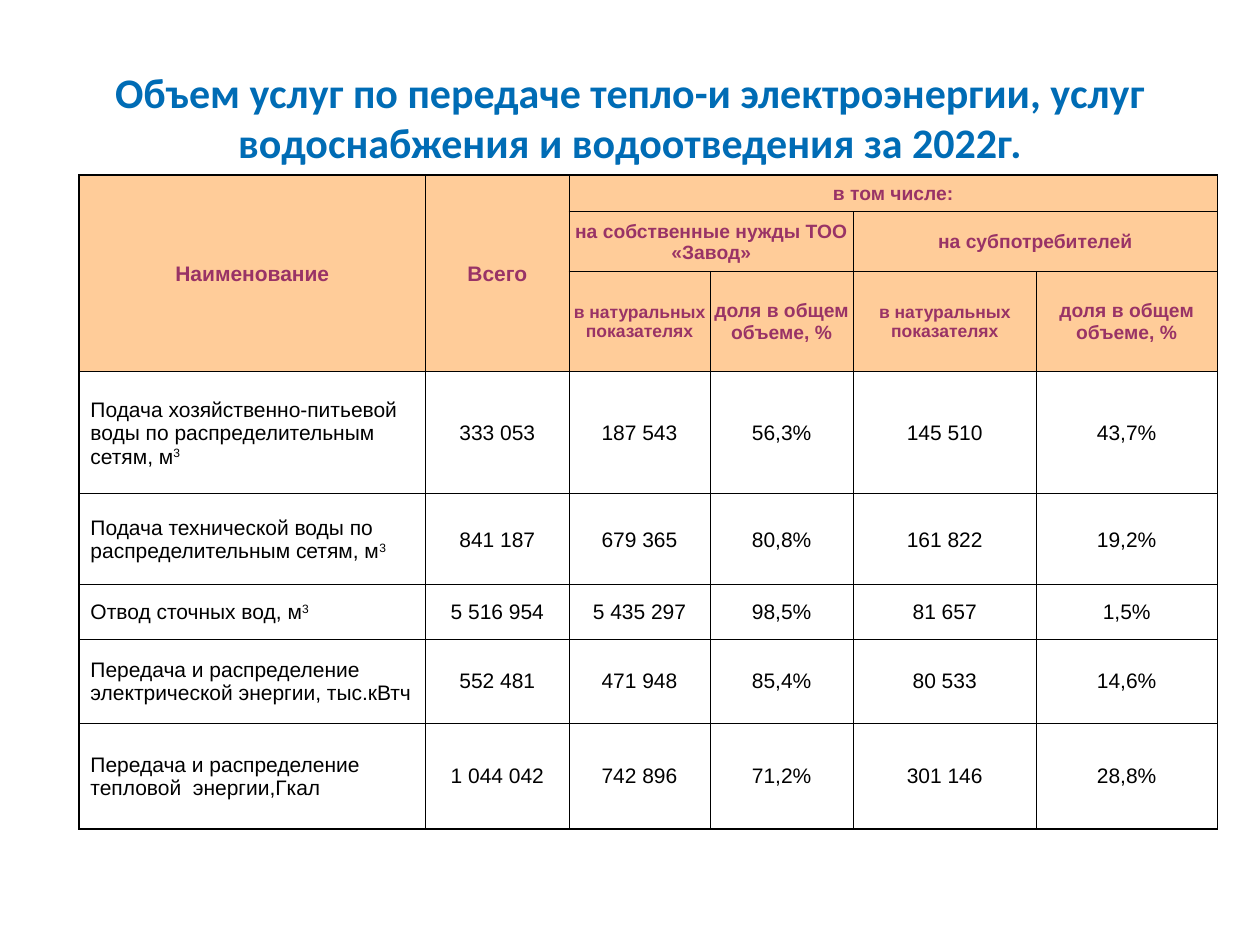
from lxml import etree
from pptx import Presentation
from pptx.dml.color import RGBColor
from pptx.enum import text
from pptx.oxml import ns
from pptx.util import Pt

BLUE = RGBColor(0x00, 0x6C, 0xB5)
PLUM = RGBColor(0x99, 0x33, 0x66)
PEACH = RGBColor(0xFF, 0xCC, 0x99)
BLACK = RGBColor(0x00, 0x00, 0x00)

COLS = [198, 82, 80.5, 82, 104.4, 103.6]
ROWS = [21, 34, 57.4, 69.8, 52, 31, 48, 60.5]
HEAD_ROWS = 3

# Header cells: row, column, rows spanned, columns spanned, size, wording
HEADER = [
    (0, 0, 3, 1, 12, "Наименование"),
    (0, 1, 3, 1, 12, "Всего"),
    (0, 2, 1, 4, 11, "в том числе:"),
    (1, 2, 1, 2, 11, "на собственные нужды ТОО «Завод»"),
    (1, 4, 1, 2, 11, "на субпотребителей"),
    (2, 2, 1, 1, 10, "в натуральных показателях"),
    (2, 3, 1, 1, 11, "доля в общем объеме, %"),
    (2, 4, 1, 1, 10, "в натуральных показателях"),
    (2, 5, 1, 1, 11, "доля в общем объеме, %"),
]

# Service, superscript of its unit, values
SERVICES = [
    ("Подача хозяйственно-питьевой воды по распределительным сетям, м", "3",
     ["333 053", "187 543", "56,3%", "145 510", "43,7%"]),
    ("Подача технической воды по распределительным сетям, м", "3",
     ["841 187", "679 365", "80,8%", "161 822", "19,2%"]),
    ("Отвод сточных вод, м", "3",
     ["5 516 954", "5 435 297", "98,5%", "81 657", "1,5%"]),
    ("Передача и распределение электрической энергии, тыс.кВтч", "",
     ["552 481", "471 948", "85,4%", "80 533", "14,6%"]),
    ("Передача и распределение тепловой  энергии,Гкал", "",
     ["1 044 042", "742 896", "71,2%", "301 146", "28,8%"]),
]


class Deck:
    """Holds the style and the current slide."""

    center = text.PP_ALIGN.CENTER
    left = text.PP_ALIGN.LEFT
    middle = text.MSO_ANCHOR.MIDDLE

    def __init__(self, prs):
        self.s = prs.slides.add_slide(prs.slide_layouts[6])

    def style(self, p, font, size, color, bold, align):
        p.alignment = align
        p.font.name, p.font.size, p.font.bold = font, Pt(size), bold
        p.font.color.rgb = color

    def title(self, x, y, w, h, words):
        sp = self.s.shapes.add_textbox(Pt(x), Pt(y), Pt(w), Pt(h))
        tf = sp.text_frame
        tf.word_wrap = True
        tf.vertical_anchor = self.middle
        p = tf.paragraphs[0]
        p.text = words
        self.style(p, "Calibri", 24, BLUE, True, self.center)

    def table(self, x, y, cols, rows):
        sp = self.s.shapes.add_table(len(rows), len(cols), Pt(x), Pt(y),
                                     Pt(sum(cols)), Pt(sum(rows)))
        tbl = sp.table
        tbl.first_row = tbl.horz_banding = False
        for column, w in zip(tbl.columns, cols):
            column.width = Pt(w)
        for row, h in zip(tbl.rows, rows):
            row.height = Pt(h)
        return tbl

    def border(self, cell, **widths):
        tc_pr = cell._tc.get_or_add_tcPr()
        for side, width in widths.items():
            ln = etree.SubElement(tc_pr, ns.qn("a:ln" + side), w=str(Pt(width)))
            fill = etree.SubElement(ln, ns.qn("a:solidFill"))
            etree.SubElement(fill, ns.qn("a:srgbClr"), val=str(BLACK))

    def frame(self, tbl):
        """Heavy lines outside and under the header, thin ones elsewhere."""
        last_row, last_col = len(tbl.rows) - 1, len(tbl.columns) - 1
        for r in range(last_row + 1):
            for c in range(last_col + 1):
                cell = tbl.cell(r, c)
                bottom, right = r, c
                if cell.is_merge_origin:
                    bottom += cell.span_height - 1
                    right += cell.span_width - 1
                self.border(
                    cell,
                    L=1 if c == 0 else 0.5,
                    R=1 if right == last_col else 0.5,
                    T=1 if r in (0, HEAD_ROWS) else 0.5,
                    B=1 if bottom in (HEAD_ROWS - 1, last_row) else 0.5,
                )
                if r < HEAD_ROWS:
                    cell.fill.solid()
                    cell.fill.fore_color.rgb = PEACH
                else:
                    cell.fill.background()

    def cell(self, cell, words, size=12, color=BLACK, bold=False,
             align=text.PP_ALIGN.CENTER, indent=0.7, sup=""):
        cell.vertical_anchor = self.middle
        cell.margin_left = Pt(indent)
        cell.margin_right = cell.margin_top = Pt(0.7)
        cell.margin_bottom = Pt(0)
        p = cell.text_frame.paragraphs[0]
        p.add_run().text = words
        if sup:
            r = p.add_run()
            r.text = sup
            r._r.get_or_add_rPr().set("baseline", "30000")
        self.style(p, "Arial", size, color, bold, align)


def main():
    prs = Presentation()
    prs.slide_width, prs.slide_height = Pt(720), Pt(540)
    deck = Deck(prs)

    # Title
    deck.title(36, 21.6, 648, 90,
               "Объем услуг по передаче тепло-и электроэнергии, "
               "услуг водоснабжения и водоотведения за 2022г.")

    # Table header
    tbl = deck.table(45.2, 100, COLS, ROWS)
    for r, c, height, width, size, words in HEADER:
        cell = tbl.cell(r, c)
        if height * width > 1:
            cell.merge(tbl.cell(r + height - 1, c + width - 1))
        deck.cell(cell, words, size, PLUM, True)

    # Table body
    for r, (service, sup, values) in enumerate(SERVICES, HEAD_ROWS):
        deck.cell(tbl.cell(r, 0), service, align=deck.left, indent=6.5, sup=sup)
        for c, value in enumerate(values, 1):
            deck.cell(tbl.cell(r, c), value)

    # Borders and fills
    deck.frame(tbl)

    prs.save("out.pptx")


if __name__ == "__main__":
    main()
